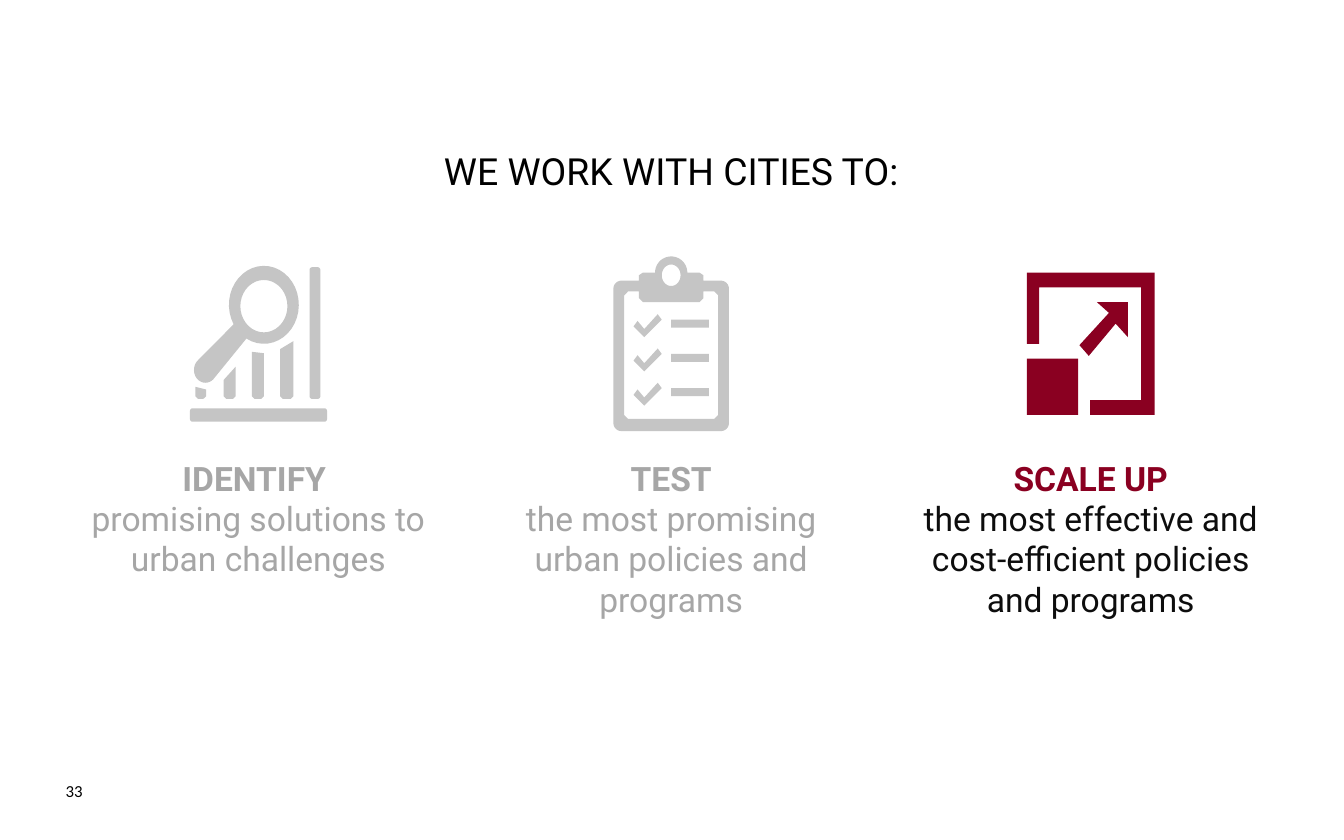
from dataclasses import dataclass
from math import cos, radians, sin

from lxml.etree import SubElement
from pptx import Presentation
from pptx.dml.color import RGBColor as Color
from pptx.enum.text import MSO_ANCHOR as Anchor, MSO_AUTO_SIZE as AutoSize, PP_ALIGN as Align
from pptx.oxml.ns import qn
from pptx.util import Cm, Pt


@dataclass(frozen=True)
class Theme:
    font: str = "Roboto"
    number_font: str = "Calibri"
    title_size: float = 20
    step_size: float = 18
    number_size: float = 9
    black: str = "000000"
    body: str = "0D0D0D"
    accent: str = "8A0021"
    muted: str = "A6A6A6"
    icon: str = "595959"
    icon_alpha: int = 35


@dataclass(frozen=True)
class Box:
    left: float
    top: float
    width: float
    height: float

    def lengths(self):
        return [Cm(value) for value in (self.left, self.top, self.width, self.height)]


THEME = Theme()
CELL = 25.4


def apply(target, values):
    for name, value in values.items():
        setattr(target, name, value)


def add_run(paragraph, text, color, size, name=THEME.font, bold=False):
    run = paragraph.add_run()
    run.text = text
    apply(run.font, {"name": name, "size": Pt(size), "bold": bold})
    run.font.color.rgb = Color.from_string(color)


def arc(x, y, radius_x, radius_y, start=0, end=360, steps=36):
    angles = [radians(start + (end - start) * i / steps) for i in range(steps + 1)]
    return [(x + radius_x * cos(a), y + radius_y * sin(a)) for a in angles]


def rectangle(left, top, right, bottom):
    return [(left, top), (right, top), (right, bottom), (left, bottom)]


def rounded(left, top, right, bottom, radius):
    corners = [(right, bottom), (left, bottom), (left, top), (right, top)]
    centers = [(abs(x - radius) if x == right else x + radius,
                y - radius if y == bottom else y + radius) for x, y in corners]
    return [point for i, (x, y) in enumerate(centers)
            for point in arc(x, y, radius, radius, 90 * i, 90 * i + 90, 6)]


def chart_bar(left, right, left_top, right_top, bottom=101, cut=2):
    return [(left, left_top), (right, right_top), (right, bottom - cut),
            (right - cut, bottom), (left + cut, bottom), (left, bottom - cut)]


def magnifier_outlines():
    lens = arc(55, 31, 26, 29, 150, 480)
    handle = arc(11.5, 79.5, 8.5, 9.5, 45, 230)
    bars = [(4, 12, 92, 94), (25, 34, 87, 77), (46, 55, 66, 67), (67, 77, 64, 58)]
    return [lens + handle, arc(55, 32, 17.5, 19.5),
            rounded(89, 3, 97, 101, 2), rounded(0, 108, 102, 118, 2),
            *(chart_bar(*bar) for bar in bars)]


def clipboard_outlines():
    board = [*arc(6, 24, 6, 6, 180, 270, 6), (19, 18), (19, 14), (22, 12),
             *arc(43, 12, 12, 12, 180, 360), (64, 12), (67, 14), (67, 18),
             *arc(80, 24, 6, 6, 270, 360, 6), *arc(80, 124, 6, 6, 0, 90, 6),
             *arc(6, 124, 6, 6, 90, 180, 6)]
    paper = [(19, 26), (19, 31), (22, 34), (64, 34), (67, 31), (67, 26), (75, 26),
             (78, 29), (78, 118), (75, 121), (11, 121), (8, 118), (8, 29), (11, 26)]
    check = [(23, 54), (18, 48), (15, 52), (23, 60), (36, 47), (33, 43)]
    outlines = [board, arc(43, 14, 7, 8), paper]
    for row in range(3):
        for mark in (check, rectangle(43, 47, 71, 53)):
            outlines.append([(x, y + 25.5 * row) for x, y in mark])
    return outlines


def expand_outlines():
    frame = [(0, 0), (0, 53), (9, 53), (9, 11), (85, 11), (85, 95),
             (47, 95), (47, 106), (95, 106), (95, 0)]
    arrow = [(75, 48), (75, 22), (52, 22), (61, 30), (39, 54), (46, 62), (66, 38)]
    return [frame, arrow, rectangle(0, 64, 38, 106)]


def add_icon(slide, box, outlines, color, alpha=100):
    grid = [[(x * CELL, y * CELL) for x, y in outline] for outline in outlines]
    builder = slide.shapes.build_freeform(*grid[0][0], scale=Cm(0.001))
    for index, points in enumerate(grid):
        if index:
            builder.move_to(*points[0])
        builder.add_line_segments(points[1:], close=True)
    shape = builder.convert_to_shape()
    left, top, width, height = box.lengths()
    apply(shape, {"left": left + (width - shape.width) // 2,
                  "top": top + (height - shape.height) // 2})
    shape.shadow.inherit = False
    shape.line.fill.background()
    shape.fill.solid()
    shape.fill.fore_color.rgb = Color.from_string(color)
    if alpha < 100:
        fill_color = shape.fill._xPr.find(".//" + qn("a:srgbClr"))
        SubElement(fill_color, qn("a:alpha")).set("val", str(alpha * 1000))


def add_title(slide, box, text):
    title = slide.shapes.title
    apply(title, dict(zip(("left", "top", "width", "height"), box.lengths())))
    apply(title.text_frame, {"word_wrap": True, "auto_size": AutoSize.NONE,
                             "vertical_anchor": Anchor.TOP})
    paragraph = title.text_frame.paragraphs[0]
    paragraph.alignment = Align.CENTER
    add_run(paragraph, text, THEME.black, THEME.title_size)


def add_step(slide, box, outlines, heading, description, active):
    icon_height = 3.3
    text_offset = 3.68
    icon_box = Box(box.left, box.top, box.width, icon_height)
    text_box = Box(box.left, box.top + text_offset, box.width, box.height - text_offset)
    if active:
        add_icon(slide, icon_box, outlines, THEME.accent)
    else:
        add_icon(slide, icon_box, outlines, THEME.icon, THEME.icon_alpha)
    frame = slide.shapes.add_textbox(*text_box.lengths()).text_frame
    frame.word_wrap = True
    lines = [(heading, THEME.accent if active else THEME.muted, True),
             (description, THEME.body if active else THEME.muted, False)]
    for index, (text, color, bold) in enumerate(lines):
        paragraph = frame.add_paragraph() if index else frame.paragraphs[0]
        paragraph.alignment = Align.CENTER
        add_run(paragraph, text, color, THEME.step_size, bold=bold)


def add_page_number(slide, box, number):
    frame = slide.shapes.add_textbox(*box.lengths()).text_frame
    frame.word_wrap = False
    add_run(frame.paragraphs[0], number, THEME.black, THEME.number_size, THEME.number_font)


def main():
    presentation = Presentation()
    apply(presentation, {"slide_width": Cm(25.4), "slide_height": Cm(15.88)})
    slide = presentation.slides.add_slide(presentation.slide_layouts[5])
    add_page_number(slide, Box(0.99, 14.63, 0.91, 0.64), "33")
    add_title(slide, Box(7.72, 2.67, 9.93, 1.12), "WE WORK WITH CITIES TO:")
    steps = [
        (1.24, magnifier_outlines(), "IDENTIFY ",
         "promising solutions to urban challenges", False),
        (9.04, clipboard_outlines(), "TEST",
         "the most promising urban policies and programs", False),
        (16.97, expand_outlines(), "SCALE UP",
         "the most effective and cost-efficient policies and programs", True),
    ]
    for left, *content in steps:
        add_step(slide, Box(left, 4.85, 7.29, 7.01), *content)
    presentation.save("out.pptx")


if __name__ == "__main__":
    main()
